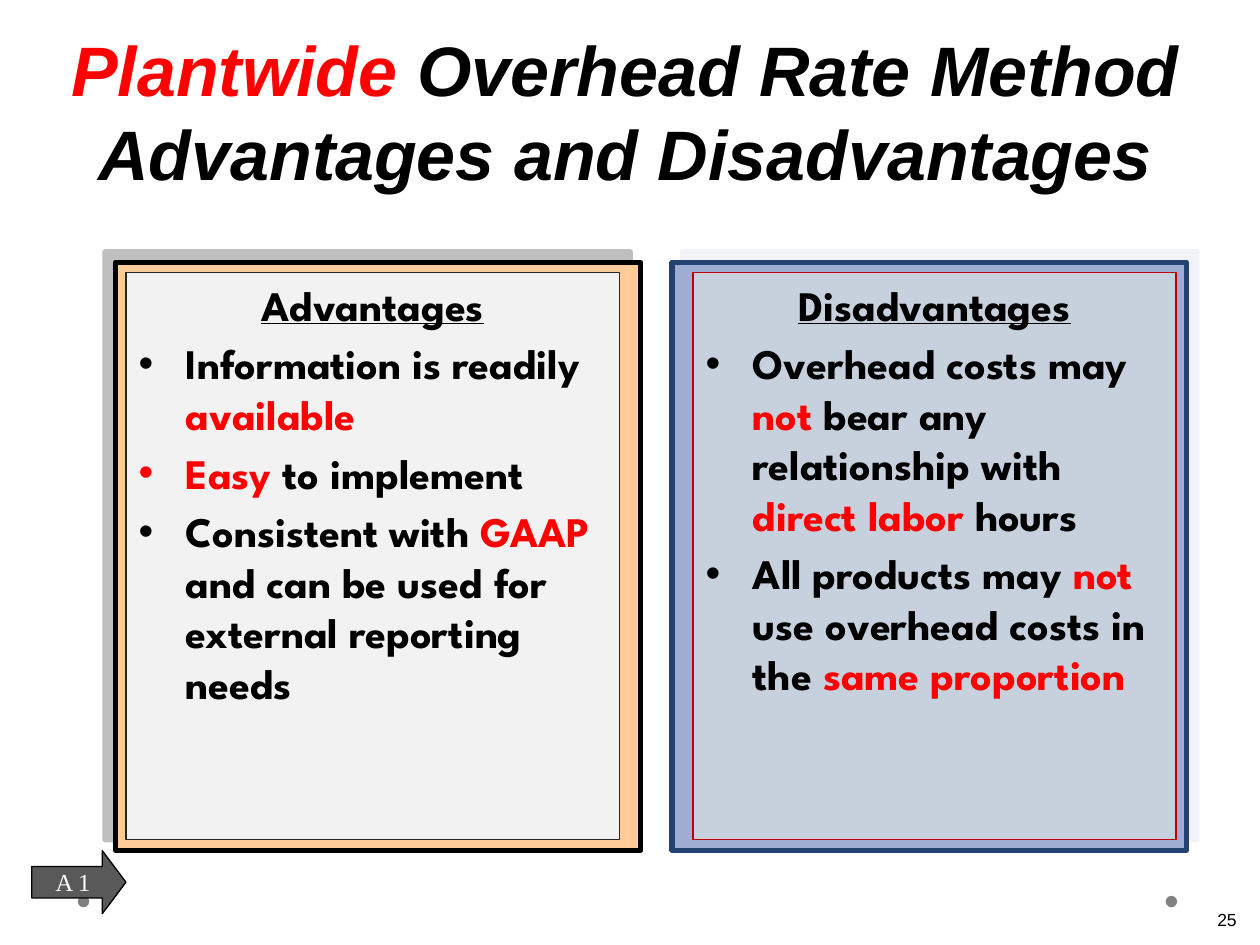
"""Build a slide weighing the plantwide overhead rate method."""
import dataclasses

import lxml.etree
import pptx
import pptx.dml.color
import pptx.enum.shapes
import pptx.enum.text
import pptx.oxml.ns
import pptx.util

Cm, Pt = pptx.util.Cm, pptx.util.Pt
RGB = pptx.dml.color.RGBColor.from_string
SHAPE = pptx.enum.shapes.MSO_SHAPE
ALIGN = pptx.enum.text.PP_ALIGN
ANCHOR = pptx.enum.text.MSO_ANCHOR
qn = pptx.oxml.ns.qn


@dataclasses.dataclass(frozen=True)
class Theme:
    """Colours, fonts and type sizes of the slide."""
    text: str = "000000"
    accent: str = "FF0000"
    light: str = "FFFFFF"
    dot: str = "808080"
    arrow: str = "595959"
    title: tuple = ("Arial", 40)
    body: tuple = ("League Spartan", 24)
    label: tuple = ("Times New Roman", 14)
    number: tuple = ("Arial", 10)


T = Theme()

ADVANTAGES = dict(
    frame=(2.33, 5.29, 10.59, 11.85), frame_style=("FFCC99", "000000", 3),
    shadow=("808080", 225),
    box=(2.54, 5.5, 9.95, 11.43), box_style=("F2F2F2", "262626", 0.75),
    heading="Advantages",
    bullets=[
        ["Information is readily ", "*available"],
        ["*Easy", " to implement"],
        ["Consistent with ", "*GAAP",
         " and can be used for external reporting needs"],
    ])
DISADVANTAGES = dict(
    frame=(13.55, 5.29, 10.37, 11.85), frame_style=("A0ADD2", "234271", 3),
    shadow=("E4E9EF", 315),
    box=(13.97, 5.5, 9.74, 11.43), box_style=("C7D1DE", "C00000", 0.75),
    heading="Disadvantages",
    bullets=[
        ["Overhead costs may ", "*not", " bear any relationship with ",
         "*direct labor ", "hours"],
        ["All products may ", "*not", " use overhead costs in the ",
         "*same proportion"],
    ])


def set_all(target, **values):
    """Set each named attribute on the target."""
    for name, value in values.items():
        setattr(target, name, value)


def place(sp, left, top, width, height):
    """Position a shape, with lengths in centimetres."""
    set_all(sp, left=Cm(left), top=Cm(top), width=Cm(width), height=Cm(height))


def paint(sp, fill, line=None, weight=0):
    """Give a shape a solid fill and an optional outline."""
    sp.fill.solid()
    sp.fill.fore_color.rgb = RGB(fill)
    if line:
        sp.line.color.rgb = RGB(line)
        sp.line.width = Pt(weight)
    else:
        sp.line.fill.background()


def add_shape(s, kind, at, *style):
    """Add a preset shape without a shadow."""
    sp = s.shapes.add_shape(kind, *map(Cm, at))
    sp.shadow.inherit = False
    paint(sp, *style)
    return sp


def add_shadow(sp, color, angle):
    """Cast a hard, half-transparent shadow at the given angle."""
    effects = sp._element.spPr.find(qn("a:effectLst"))
    shadow = lxml.etree.SubElement(
        effects, qn("a:outerShdw"), dist=str(Pt(8.5)), dir=str(angle * 60000),
        algn="ctr", rotWithShape="0")
    clr = lxml.etree.SubElement(shadow, qn("a:srgbClr"), val=color)
    lxml.etree.SubElement(clr, qn("a:alpha"), val="50000")


def add_runs(p, parts, face, color=T.text, **style):
    """Add runs to a paragraph; a leading asterisk marks the accent colour."""
    for part in parts:
        r = p.add_run()
        r.text = part.removeprefix("*")
        set_all(r.font, name=face[0], size=Pt(face[1]), **style)
        r.font.color.rgb = RGB(T.accent if part.startswith("*") else color)


def set_bullet(p, char=None):
    """Give a paragraph a hanging bullet, or none."""
    pPr = p._p.get_or_add_pPr()
    hang = Cm(0.95) if char else 0
    pPr.set("marL", str(hang))
    pPr.set("indent", str(-hang))
    if char:
        lxml.etree.SubElement(pPr, qn("a:buChar"), char=char)
    else:
        lxml.etree.SubElement(pPr, qn("a:buNone"))


def fill_title(sp):
    """Move and fill the title placeholder."""
    place(sp, 0, 1.06, 25.2, 2.98)
    tf = sp.text_frame
    set_all(tf, word_wrap=True, vertical_anchor=ANCHOR.BOTTOM,
            auto_size=pptx.enum.text.MSO_AUTO_SIZE.NONE)
    p = tf.paragraphs[0]
    p.alignment = ALIGN.CENTER
    add_runs(p, ["*Plantwide",
                 " Overhead Rate Method Advantages and Disadvantages"],
             T.title, bold=True, italic=True)


def add_panel(s, sp, panel):
    """Draw a framed panel and fill its body placeholder with a list."""
    frame = add_shape(s, SHAPE.RECTANGLE, panel["frame"], *panel["frame_style"])
    add_shadow(frame, *panel["shadow"])
    s.shapes._spTree.append(sp._element)
    place(sp, *panel["box"])
    paint(sp, *panel["box_style"])
    tf = sp.text_frame
    set_all(tf, word_wrap=True, vertical_anchor=ANCHOR.TOP,
            auto_size=pptx.enum.text.MSO_AUTO_SIZE.NONE)
    p = tf.paragraphs[0]
    set_all(p, alignment=ALIGN.CENTER, space_before=Pt(0))
    set_bullet(p)
    add_runs(p, [panel["heading"]], T.body, bold=True, underline=True)
    for parts in panel["bullets"]:
        p = tf.add_paragraph()
        set_all(p, alignment=ALIGN.LEFT, space_before=Pt(4.8))
        set_bullet(p, "•")
        add_runs(p, parts, T.body, bold=True)


def add_arrow(s):
    """Add the labelled arrow."""
    sp = add_shape(s, SHAPE.RIGHT_ARROW, (0.64, 17.15, 1.9, 1.27),
                   T.arrow, T.text, 0.75)
    sp.adjustments[0], sp.adjustments[1] = 0.5, 0.375
    tf = sp.text_frame
    set_all(tf, word_wrap=False, vertical_anchor=ANCHOR.MIDDLE)
    p = tf.paragraphs[0]
    p.alignment = ALIGN.CENTER
    add_runs(p, ["A 1"], T.label, T.light)


def add_number(s):
    """Add the slide number."""
    tf = s.shapes.add_textbox(*map(Cm, (23.7, 18.2, 1.48, 0.64))).text_frame
    tf.word_wrap = True
    p = tf.paragraphs[0]
    p.alignment = ALIGN.RIGHT
    add_runs(p, ["25"], T.number)


def main():
    """Build and save the slide."""
    prs = pptx.Presentation()
    set_all(prs, slide_width=Cm(25.4), slide_height=Cm(19.05))
    s = prs.slides.add_slide(prs.slide_layouts[3])
    title, left, right = s.placeholders
    for x in (1.57, 23.5):
        add_shape(s, SHAPE.OVAL, (x, 18.06, 0.23, 0.23), T.dot)
    fill_title(title)
    add_panel(s, left, ADVANTAGES)
    add_panel(s, right, DISADVANTAGES)
    add_number(s)
    add_arrow(s)
    prs.save("out.pptx")


if __name__ == "__main__":
    main()
